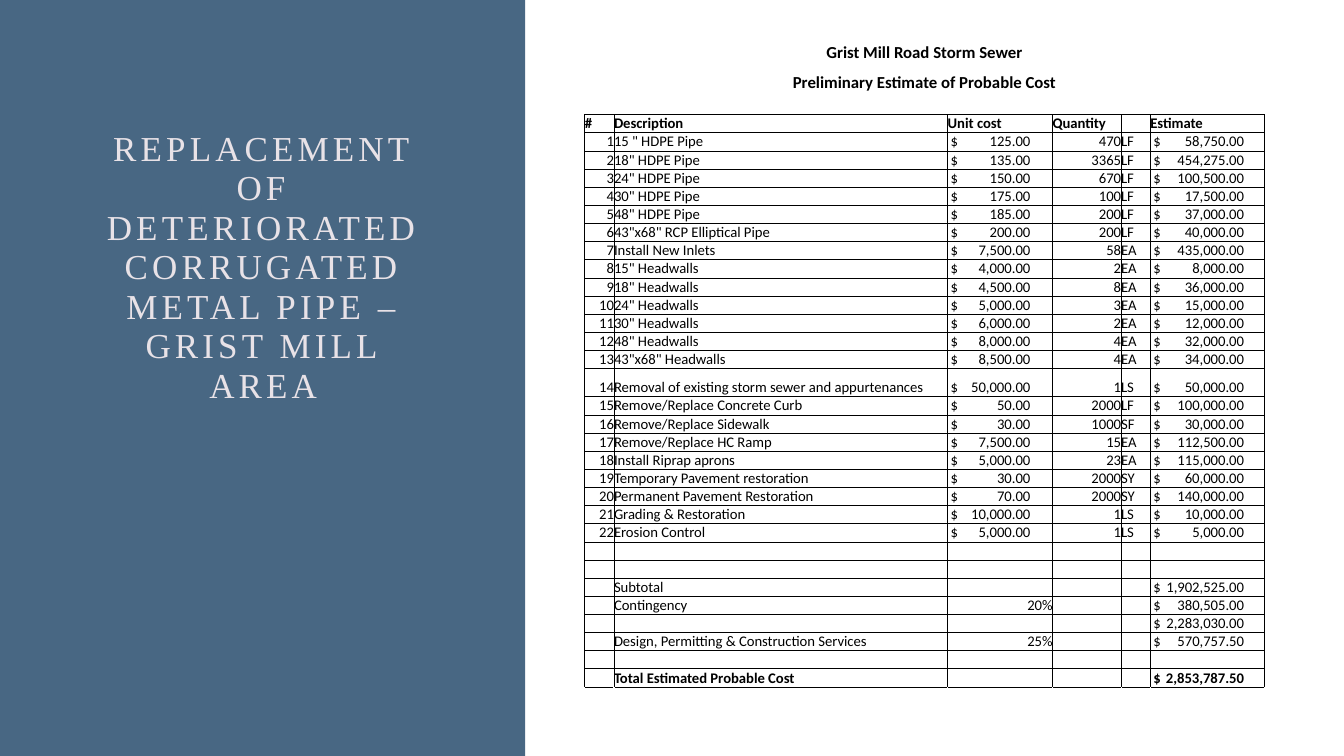
"""Build the Grist Mill storm sewer cost estimate slide."""
from dataclasses import dataclass
from typing import Optional

from lxml.etree import SubElement
from pptx import Presentation
from pptx.dml.color import RGBColor
from pptx.enum.shapes import MSO_SHAPE
from pptx.enum.text import MSO_ANCHOR, MSO_AUTO_SIZE, PP_ALIGN
from pptx.oxml.ns import qn
from pptx.slide import Slide
from pptx.table import Table, _Cell
from pptx.util import Inches, Pt


@dataclass(frozen=True)
class Theme:
    panel: RGBColor = RGBColor(0x48, 0x67, 0x83)
    title: RGBColor = RGBColor(0xE8, 0xE2, 0xE7)
    ink: RGBColor = RGBColor(0, 0, 0)
    title_font: str = "Times New Roman"
    table_font: str = "Calibri"
    title_size: float = 25
    heading_size: float = 12
    body_size: float = 10.5
    spacer_size: float = 8
    border: float = 0.5


@dataclass(frozen=True)
class Item:
    description: str
    unit_cost: float
    quantity: int
    unit: str

    @property
    def estimate(self) -> float:
        return self.unit_cost * self.quantity


@dataclass(frozen=True)
class Entry:
    text: str = ""
    align: PP_ALIGN = PP_ALIGN.LEFT
    bold: bool = False
    size: float = Theme.body_size
    tab: Optional[float] = None
    padding: float = 0
    sides: str = "LRTB"


THEME = Theme()
COLUMNS = (0.29, 3.31, 1.04, 0.68, 0.29, 1.13)
HEADING_HEIGHT, GAP_HEIGHT, ROW_HEIGHT, TALL_HEIGHT, END_HEIGHT = 0.3, 0.16, 0.18, 0.28, 0.14
UNIT_COST_TAB, ESTIMATE_TAB = 0.79, 0.9
TALL_ITEM = "Removal of existing storm sewer and appurtenances"
HEADINGS = ("Grist Mill Road Storm Sewer", "Preliminary Estimate of Probable Cost")
LABELS = ("#", "Description", "Unit cost", "Quantity", "", "Estimate")
CONTINGENCY, SERVICES = 0.2, 0.25
ITEMS = (
    Item('15 " HDPE Pipe', 125, 470, "LF"),
    Item('18" HDPE Pipe', 135, 3365, "LF"),
    Item('24" HDPE Pipe', 150, 670, "LF"),
    Item('30" HDPE Pipe', 175, 100, "LF"),
    Item('48" HDPE Pipe', 185, 200, "LF"),
    Item('43"x68" RCP Elliptical Pipe', 200, 200, "LF"),
    Item("Install New Inlets", 7500, 58, "EA"),
    Item('15" Headwalls', 4000, 2, "EA"),
    Item('18" Headwalls', 4500, 8, "EA"),
    Item('24" Headwalls', 5000, 3, "EA"),
    Item('30" Headwalls', 6000, 2, "EA"),
    Item('48" Headwalls', 8000, 4, "EA"),
    Item('43"x68" Headwalls', 8500, 4, "EA"),
    Item(TALL_ITEM, 50000, 1, "LS"),
    Item("Remove/Replace Concrete Curb", 50, 2000, "LF"),
    Item("Remove/Replace Sidewalk", 30, 1000, "SF"),
    Item("Remove/Replace HC Ramp", 7500, 15, "EA"),
    Item("Install Riprap aprons", 5000, 23, "EA"),
    Item("Temporary Pavement restoration", 30, 2000, "SY"),
    Item("Permanent Pavement Restoration", 70, 2000, "SY"),
    Item("Grading & Restoration", 10000, 1, "LS"),
    Item("Erosion Control", 5000, 1, "LS"),
)


def money(value: float, tab: float, bold: bool = False) -> Entry:
    return Entry(f"$\t{value:,.2f}", bold=bold, tab=tab)


def right(text: str) -> Entry:
    return Entry(text, PP_ALIGN.RIGHT)


def item_row(number: int, item: Item) -> list[Entry]:
    return [right(str(number)), Entry(item.description), money(item.unit_cost, UNIT_COST_TAB),
            right(str(item.quantity)), Entry(item.unit), money(item.estimate, ESTIMATE_TAB)]


def summary_row(label: str, value: float, rate: str = "", bold: bool = False) -> list[Entry]:
    return [Entry(), Entry(label, bold=bold), right(rate), Entry(), Entry(),
            money(value, ESTIMATE_TAB, bold)]


def spacer_row(sides: str) -> list[Entry]:
    return [Entry(size=THEME.spacer_size, sides=sides)] * len(COLUMNS)


def estimate_rows() -> list[tuple[float, list[Entry]]]:
    """Return the height and entries of every table row."""
    subtotal = sum(item.estimate for item in ITEMS)
    contingency = subtotal * CONTINGENCY
    services = (subtotal + contingency) * SERVICES
    blank = [Entry()] * len(COLUMNS)
    rows = [(HEADING_HEIGHT, [Entry(text, PP_ALIGN.CENTER, True, THEME.heading_size,
                                    padding=0.05, sides="")]) for text in HEADINGS]
    rows.append((GAP_HEIGHT, spacer_row("B")))
    rows.append((ROW_HEIGHT, [Entry(label, bold=True) for label in LABELS]))
    rows += [(TALL_HEIGHT if item.description == TALL_ITEM else ROW_HEIGHT, item_row(n, item))
             for n, item in enumerate(ITEMS, 1)]
    summary = (
        blank,
        blank,
        summary_row("Subtotal", subtotal),
        summary_row("Contingency", contingency, f"{CONTINGENCY:.0%}"),
        summary_row("", subtotal + contingency),
        summary_row("Design, Permitting & Construction Services", services, f"{SERVICES:.0%}"),
        blank,
        summary_row("Total Estimated Probable Cost", subtotal + contingency + services, bold=True),
    )
    rows += [(ROW_HEIGHT, row) for row in summary]
    rows.append((END_HEIGHT, spacer_row("T")))
    return rows


def fill_cell(cell: _Cell, entry: Entry) -> None:
    """Write and format one table cell."""
    cell.margin_left = Inches(0.03 if entry.tab else 0)
    cell.margin_right = 0
    cell.margin_top = cell.margin_bottom = Inches(entry.padding)
    cell.vertical_anchor = MSO_ANCHOR.BOTTOM
    tcPr = cell._tc.get_or_add_tcPr()
    for side in entry.sides:
        ln = SubElement(tcPr, qn(f"a:ln{side}"), w=str(Pt(THEME.border)))
        SubElement(SubElement(ln, qn("a:solidFill")), qn("a:srgbClr"), val=str(THEME.ink))
    cell.fill.background()
    p = cell.text_frame.paragraphs[0]
    p.alignment = entry.align
    if entry.tab:
        tabs = SubElement(p._p.get_or_add_pPr(), qn("a:tabLst"))
        SubElement(tabs, qn("a:tab"), pos=str(Inches(entry.tab)), algn="r")
    p.font.name, p.font.size, p.font.bold = THEME.table_font, Pt(entry.size), entry.bold
    p.font.color.rgb = THEME.ink
    if entry.text:
        p.add_run().text = entry.text
    else:
        SubElement(p._p, qn("a:endParaRPr"), sz=str(int(entry.size * 100)))


def add_estimate(slide: Slide) -> Table:
    """Add the cost estimate table."""
    rows = estimate_rows()
    frame = slide.shapes.add_table(len(rows), len(COLUMNS), Inches(5.8), Inches(0.37),
                                   Inches(sum(COLUMNS)), Inches(sum(h for h, _ in rows)))
    table = frame.table
    table.first_row = table.horz_banding = False
    for column, width in zip(table.columns, COLUMNS):
        column.width = Inches(width)
    for i, (height, entries) in enumerate(rows):
        table.rows[i].height = Inches(height)
        if len(entries) == 1:
            table.cell(i, 0).merge(table.cell(i, len(COLUMNS) - 1))
        for j, entry in enumerate(entries):
            fill_cell(table.cell(i, j), entry)
    return table


def add_title(slide: Slide) -> None:
    """Add the side panel and place the title on it."""
    title = slide.shapes.title
    panel = slide.shapes.add_shape(MSO_SHAPE.RECTANGLE, 0, 0, Inches(5.21), Inches(7.5))
    panel.shadow.inherit = False
    panel.fill.solid()
    panel.fill.fore_color.rgb = THEME.panel
    panel.line.fill.background()
    title._element.addprevious(panel._element)
    title.left, title.top, title.width, title.height = map(Inches, (0.94, 0.75, 3.34, 3.33))
    tf = title.text_frame
    tf.word_wrap, tf.auto_size, tf.vertical_anchor = True, MSO_AUTO_SIZE.NONE, MSO_ANCHOR.BOTTOM
    p = tf.paragraphs[0]
    p.alignment, p.line_spacing = PP_ALIGN.CENTER, 0.94
    p.font.name, p.font.size = THEME.title_font, Pt(THEME.title_size)
    p.font.color.rgb = THEME.title
    r = p.add_run()
    r.text = "REPLACEMENT OF DETERIORATED CORRUGATED METAL PIPE – GRIST MILL AREA"
    r._r.get_or_add_rPr().set("spc", "300")


def main() -> None:
    prs = Presentation()
    prs.slide_width, prs.slide_height = Inches(13.33), Inches(7.5)
    slide = prs.slides.add_slide(prs.slide_layouts[5])
    add_title(slide)
    add_estimate(slide)
    prs.save("out.pptx")


if __name__ == "__main__":
    main()
